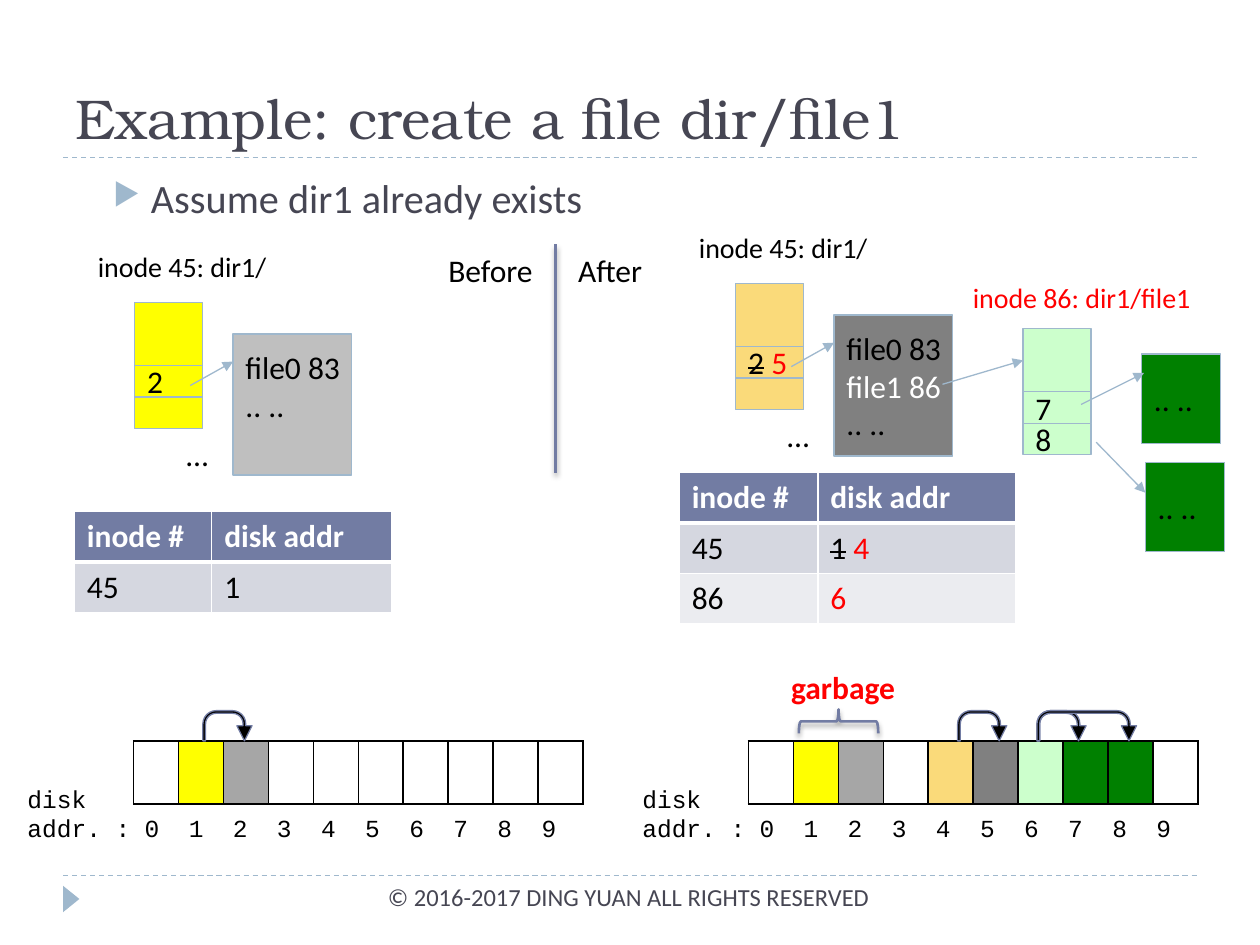
from dataclasses import dataclass
from lxml.etree import SubElement
from pptx import Presentation
from pptx.dml.color import RGBColor
from pptx.enum.dml import MSO_LINE
from pptx.enum.shapes import MSO_CONNECTOR, MSO_SHAPE
from pptx.enum.text import MSO_ANCHOR, MSO_AUTO_SIZE, PP_ALIGN
from pptx.oxml.ns import qn
from pptx.util import Inches, Pt


@dataclass(frozen=True)
class Theme:
    sans: str = "Calibri"
    mono: str = "Courier New"
    serif: str = "TeX Gyre Bonum"
    title: int = 32
    lead: int = 23
    body: int = 18
    label: int = 16
    small: int = 14
    ink: str = "000000"
    white: str = "FFFFFF"
    slate: str = "464653"
    accent: str = "727CA3"
    pale: str = "9FB8CD"
    red: str = "FF0000"
    yellow: str = "FFFF00"
    amber: str = "FADA7A"
    silver: str = "BFBFBF"
    ash: str = "A6A6A6"
    gray: str = "808080"
    mint: str = "CCFFCC"
    green: str = "008000"
    bands: tuple = ("D5D7E0", "EBECF0")


T = Theme()


def rgb(color):
    return RGBColor.from_string(color)


def add_run(p, text, color=T.ink, size=T.body, font=T.sans, bold=False, strike=False):
    r = p.add_run()
    r.text = text
    r.font.name, r.font.size, r.font.bold = font, Pt(size), bold
    r.font.color.rgb = rgb(color)
    if strike:
        r.font._element.set("strike", "sngStrike")


def add_text(s, text, box, align=PP_ALIGN.LEFT, wrap=True, **style):
    tf = s.shapes.add_textbox(*map(Inches, box)).text_frame
    tf.word_wrap = wrap
    p = tf.paragraphs[0]
    p.alignment = align
    add_run(p, text, **style)
    return p


def set_effect(sp, shadow=False):
    effects = SubElement(sp._element.spPr, qn("a:effectLst"))
    if shadow:
        outer = SubElement(effects, qn("a:outerShdw"), blurRad="38100", dist="25400", dir="5400000")
        color = SubElement(outer, qn("a:srgbClr"), val=T.ink)
        SubElement(color, qn("a:alpha"), val="40000")


def add_line(s, start, end, color=T.pale, width=0.75, dash=False, arrow=False, shadow=False):
    sp = s.shapes.add_connector(MSO_CONNECTOR.STRAIGHT, *map(Inches, start + end))
    sp.line.color.rgb, sp.line.width = rgb(color), Pt(width)
    if dash:
        sp.line.dash_style = MSO_LINE.DASH
    if arrow:
        SubElement(sp.line._get_or_add_ln(), qn("a:tailEnd"), type="triangle")
    set_effect(sp, shadow)
    return sp


def add_shape(s, kind, box, fill=None, line=None, width=0.75):
    sp = s.shapes.add_shape(kind, *map(Inches, box))
    sp.shadow.inherit = False
    sp.fill.background()
    if fill:
        sp.fill.solid()
        sp.fill.fore_color.rgb = rgb(fill)
    sp.line.fill.background()
    if line:
        sp.line.color.rgb, sp.line.width = rgb(line), Pt(width)
    return sp


def add_block(s, box, fill, lines=()):
    sp = add_shape(s, MSO_SHAPE.RECTANGLE, box, fill, T.pale)
    tf = sp.text_frame
    tf.word_wrap, tf.vertical_anchor = False, MSO_ANCHOR.MIDDLE
    for i, runs in enumerate(lines):
        p = tf.add_paragraph() if i else tf.paragraphs[0]
        p.alignment = PP_ALIGN.LEFT
        for text, style in runs:
            add_run(p, text, **style)
    return sp


def set_borders(cell, color, bottom=1):
    tcPr = cell._tc.get_or_add_tcPr()
    for i, side in enumerate(("lnL", "lnR", "lnT", "lnB")):
        width = bottom if side == "lnB" else 1
        ln = tcPr.makeelement(qn(f"a:{side}"), {"w": str(Pt(width))})
        fill = SubElement(ln, qn("a:solidFill"))
        SubElement(fill, qn("a:srgbClr"), val=color)
        tcPr.insert(i, ln)


def add_grid(s, left, top, widths, heights):
    box = map(Inches, (left, top, sum(widths), sum(heights)))
    table = s.shapes.add_table(len(heights), len(widths), *box).table
    table.first_row = table.horz_banding = False
    for column, width in zip(table.columns, widths):
        column.width = Inches(width)
    for row, height in zip(table.rows, heights):
        row.height = Inches(height)
    return table


def fill_cell(cell, color):
    cell.fill.solid()
    cell.fill.fore_color.rgb = rgb(color)


def inode_map(s, left, top, widths, rows):
    header = [[(name, {"color": T.white, "bold": True})] for name in ("inode #", "disk addr")]
    table = add_grid(s, left, top, widths, [0.4] * (len(rows) + 1))
    for i, row in enumerate([header] + rows):
        for j, runs in enumerate(row):
            cell = table.cell(i, j)
            fill_cell(cell, T.bands[(i - 1) % 2] if i else T.accent)
            set_borders(cell, T.white, 1 if i else 3)
            for text, style in runs:
                add_run(cell.text_frame.paragraphs[0], text, **style)


def inode(s, left, top, fill, slots):
    head = add_block(s, (left, top, 0.54, 0.5), fill)
    for i, runs in enumerate(slots):
        add_block(s, (left, top + 0.5 + 0.25 * i, 0.54, 0.25), fill, [runs] if runs else [])
    return head


def directory(s, left, top, fill, slot, data_fill, entries):
    add_text(s, "inode 45: dir1/", (left, top, 1.89, 0.37), PP_ALIGN.CENTER, size=T.label)
    inode(s, left + 0.57, top + 0.47, fill, [slot, []])
    add_text(s, "…", (left + 0.73, top + 1.47, 0.67, 0.37), PP_ALIGN.CENTER)
    add_block(s, (left + 1.35, top + 0.72, 0.94, 1.12), data_fill, entries)
    add_line(s, (left + 1.01, top + 1.13), (left + 1.35, top + 0.94), arrow=True)


def new_file(s, left, top):
    add_text(s, "inode 86: dir1/file1", (left, top, 2.21, 0.37), PP_ALIGN.CENTER,
             color=T.red, size=T.label)
    head = inode(s, left + 0.64, top + 0.43, T.mint, [[("7", {})], [("8", {})]])
    add_line(s, (left, top + 0.87), (left + 0.64, top + 0.68), arrow=True).end_connect(head, 1)
    for dx, dy in ((1.58, 0.63), (1.61, 1.49)):
        add_block(s, (left + dx, top + dy, 0.63, 0.71), T.green, [[(".. ..", {})]])
    add_line(s, (left + 1.1, top + 1.03), (left + 1.6, top + 0.78), arrow=True)
    add_line(s, (left + 1.22, top + 1.33), (left + 1.61, top + 1.73), arrow=True)


def disk(s, left, top, fills, hops):
    count, slot = 10, 0.357
    p = add_text(s, "disk", (left, top + 0.53, 5.04, 0.57), font=T.mono, size=T.small)
    p = s.shapes[-1].text_frame.add_paragraph()
    tabs = SubElement(p._p.get_or_add_pPr(), qn("a:tabLst"))
    for i in range(count):
        SubElement(tabs, qn("a:tab"), pos=str(Inches(0.93 + 0.35 * i)), algn="l")
    add_run(p, "\t".join(["addr. :", *map(str, range(count))]), font=T.mono, size=T.small)
    table = add_grid(s, left + 0.94, top + 0.24, [slot] * count, [0.5])
    for i in range(count):
        cell = table.cell(0, i)
        fill_cell(cell, fills.get(i, T.white))
        set_borders(cell, T.ink)
    for dx, width in hops:
        box = (left + 0.94 + dx, top, width, 0.24)
        sp = add_shape(s, MSO_SHAPE.U_TURN_ARROW, box, T.ink, T.accent)
        for i, value in enumerate((0.09, 0.25, 0.5, 0.44, 1)):
            sp.adjustments[i] = value


def garbage(s, left, top):
    sp = add_shape(s, MSO_SHAPE.LEFT_BRACE, (left + 0.38, top + 0.16, 0.19, 0.63),
                   line=T.accent, width=1.5)
    sp.rotation = 90
    sp._element.spPr.remove(sp._element.spPr.find(qn("a:effectLst")))
    set_effect(sp, True)
    add_text(s, "garbage", (left, top, 1.14, 0.4), wrap=False, color=T.red, bold=True)


def frame(s):
    for y in (1.25, 6.95):
        add_line(s, (0.5, y), (9.5, y), dash=True)
    add_shape(s, MSO_SHAPE.ISOSCELES_TRIANGLE, (0.46, 7.07, 0.21, 0.13), T.pale).rotation = 90
    title = s.shapes.title
    title.left, title.top, title.width, title.height = map(Inches, (0.5, 0.17, 9, 1.08))
    tf = title.text_frame
    tf.auto_size, tf.vertical_anchor = MSO_AUTO_SIZE.NONE, MSO_ANCHOR.BOTTOM
    tf.paragraphs[0].alignment = PP_ALIGN.LEFT
    add_run(tf.paragraphs[0], "Example: create a file dir/file1", T.slate, T.title, T.serif)
    p = add_text(s, "Assume dir1 already exists", (0.5, 1.33, 9, 0.5), color=T.slate, size=T.lead)
    pPr = p._p.get_or_add_pPr()
    pPr.set("marL", str(Inches(0.6)))
    pPr.set("indent", str(Inches(-0.3)))
    SubElement(SubElement(pPr, qn("a:buClr")), qn("a:srgbClr"), val=T.pale)
    SubElement(pPr, qn("a:buSzPct"), val="76000")
    SubElement(pPr, qn("a:buChar"), char="▶")
    add_text(s, "© 2016-2017 DING YUAN ALL RIGHTS RESERVED", (2.56, 6.95, 4.44, 0.4),
             PP_ALIGN.RIGHT, color=T.slate, size=T.small)


def before(s):
    directory(s, 0.5, 1.93, T.yellow, [("2", {})], T.silver,
              [[("file0 83", {})], [(".. ..", {})], []])
    inode_map(s, 0.59, 4.06, [1.09, 1.43], [[[("45", {})], [("1", {})]]])
    disk(s, 0.12, 5.64, {1: T.yellow, 2: T.ash}, [(0.55, 0.39)])


def after(s):
    struck, red = {"strike": True}, {"color": T.red}
    directory(s, 5.27, 1.78, T.amber, [("2", struck), (" ", {}), ("5", red)], T.gray,
              [[("file0 83", {})], [("file1 86", {"color": T.white})], [(".. ..", {})]])
    new_file(s, 7.48, 2.18)
    inode_map(s, 5.39, 3.75, [1.1, 1.57],
              [[[("45", {})], [("1", struck), (" 4", red)]], [[("86", {})], [("6", red)]]])
    disk(s, 5, 5.64, {1: T.yellow, 2: T.ash, 4: T.amber, 5: T.gray, 6: T.mint,
                      7: T.green, 8: T.green}, [(1.66, 0.39), (2.29, 0.39), (2.29, 0.79)])
    garbage(s, 6.18, 5.25)


def divider(s):
    add_line(s, (4.41, 1.94), (4.41, 3.75), T.accent, 1.5, shadow=True)
    add_text(s, "Before", (3.46, 1.94, 0.88, 0.4), wrap=False)
    add_text(s, "After", (4.49, 1.94, 0.74, 0.4), wrap=False)


def main():
    prs = Presentation()
    prs.slide_width, prs.slide_height = Inches(10), Inches(7.5)
    s = prs.slides.add_slide(prs.slide_layouts[5])
    for region in (frame, before, after, divider):
        region(s)
    prs.save("out.pptx")


if __name__ == "__main__":
    main()
